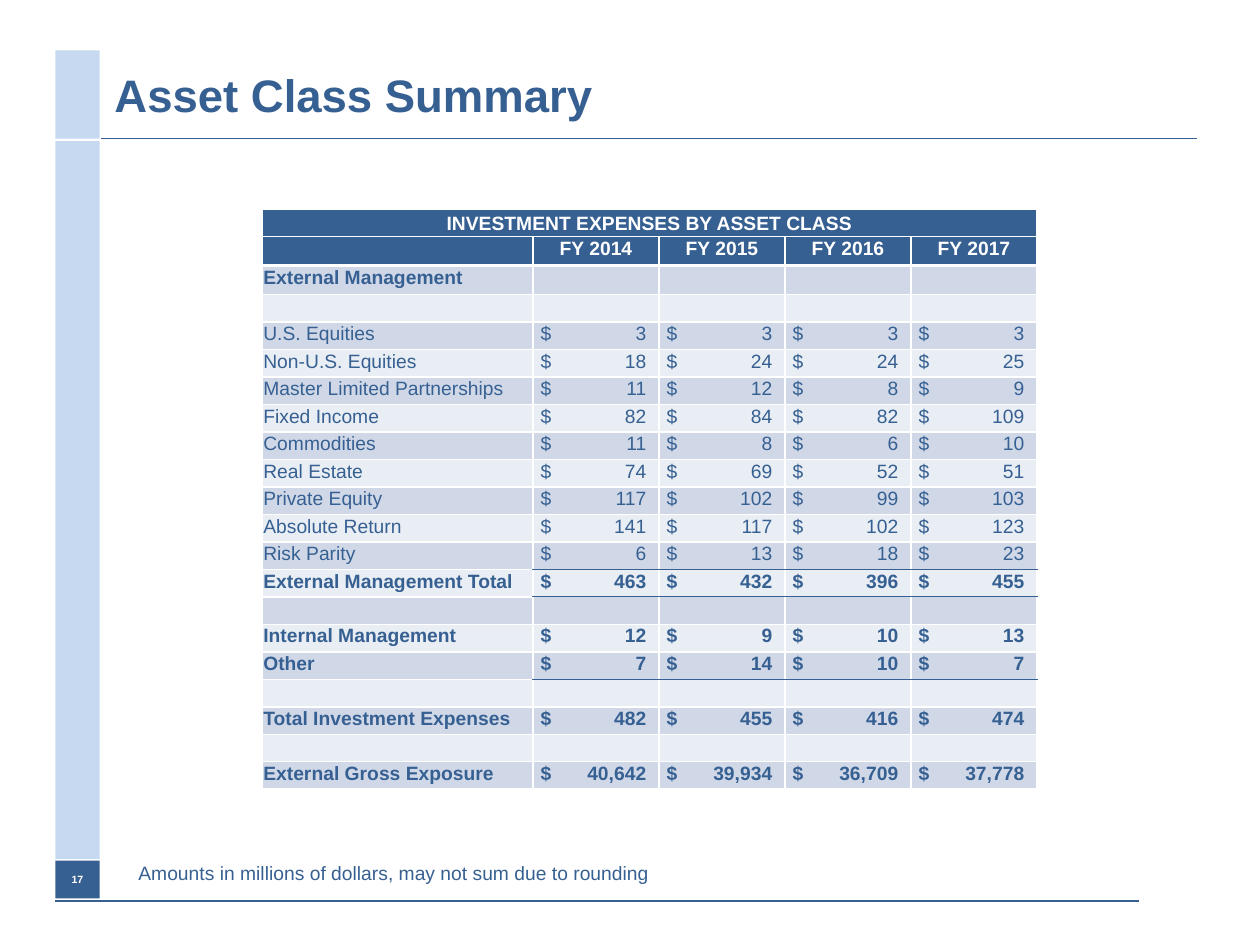
"""Build the Asset Class Summary slide with its investment expense table."""
from lxml.etree import SubElement
from pptx import Presentation
from pptx.dml.color import RGBColor
from pptx.enum.shapes import MSO_CONNECTOR, MSO_SHAPE
from pptx.enum.text import MSO_ANCHOR, PP_ALIGN
from pptx.oxml.ns import qn
from pptx.util import Inches, Pt

COLORS = {
    "blue": "376092", "ink": "366092", "pale": "C6D9F1",
    "band_dark": "D0D8E8", "band_light": "E9EDF4", "white": "FFFFFF",
}
HEADERS = ["", "FY 2014", "FY 2015", "FY 2016", "FY 2017"]
EXPENSES = [
    ("External Management", "", True),
    ("", "", False),
    ("U.S. Equities", "3 3 3 3", False),
    ("Non-U.S. Equities", "18 24 24 25", False),
    ("Master Limited Partnerships", "11 12 8 9", False),
    ("Fixed Income", "82 84 82 109", False),
    ("Commodities", "11 8 6 10", False),
    ("Real Estate", "74 69 52 51", False),
    ("Private Equity", "117 102 99 103", False),
    ("Absolute Return", "141 117 102 123", False),
    ("Risk Parity", "6 13 18 23", False),
    ("External Management Total", "463 432 396 455", True),
    ("", "", False),
    ("Internal Management", "12 9 10 13", True),
    ("Other", "7 14 10 7", True),
    ("", "", False),
    ("Total Investment Expenses", "482 455 416 474", True),
    ("", "", False),
    ("External Gross Exposure", "40,642 39,934 36,709 37,778", True),
]
RULED_ROWS = {"Risk Parity", "External Management Total", "Other"}


def write(tf, text, size, color, bold=False, align=PP_ALIGN.LEFT):
    p = tf.paragraphs[0]
    p.alignment = align
    r = p.add_run()
    r.text = text
    for name, value in {"name": "Arial", "size": Pt(size), "bold": bold}.items():
        setattr(r.font, name, value)
    r.font.color.rgb = RGBColor.from_string(COLORS[color])
    return p


def add_border(cell, side, color, width):
    ln = SubElement(cell._tc.get_or_add_tcPr(), qn(f"a:{side}"), w=str(Pt(width)))
    fill = SubElement(ln, qn("a:solidFill"))
    SubElement(fill, qn("a:srgbClr"), val=COLORS[color])


prs = Presentation()
prs.slide_width, prs.slide_height = Inches(10), Inches(7.5)
s = prs.slides.add_slide(prs.slide_layouts[6])

for x1, x2, y, width in [(0.44, 9.04, 7.15, 0.75), (0.8, 9.5, 1.1, 1)]:
    line = s.shapes.add_connector(
        MSO_CONNECTOR.STRAIGHT, Inches(x1), Inches(y), Inches(x2), Inches(y))
    line.line.color.rgb = RGBColor.from_string(COLORS["blue"])
    line.line.width = Pt(width)
    SubElement(line._element.spPr, qn("a:effectLst"))

for top, height, color, text in [
    (1.12, 5.7, "pale", ""), (0.4, 0.7, "pale", ""), (6.83, 0.3, "blue", "17"),
]:
    sp = s.shapes.add_shape(
        MSO_SHAPE.RECTANGLE, Inches(0.44), Inches(top), Inches(0.35), Inches(height))
    sp.shadow.inherit = False
    sp.fill.solid()
    sp.fill.fore_color.rgb = RGBColor.from_string(COLORS[color])
    sp.line.fill.background()
    if text:
        tf = sp.text_frame
        tf.margin_left = tf.margin_right = 0
        tf.vertical_anchor = MSO_ANCHOR.MIDDLE
        write(tf, text, 6, "white", True, PP_ALIGN.CENTER)

for left, top, width, height, text, size, bold in [
    (0.81, 0.4, 8.69, 0.7, "Asset Class Summary", 26, True),
    (1, 6.73, 5.67, 0.4,
     "Amounts in millions of dollars, may not sum due to rounding", 11, False),
]:
    tf = s.shapes.add_textbox(
        Inches(left), Inches(top), Inches(width), Inches(height)).text_frame
    tf.word_wrap = True
    tf.vertical_anchor = MSO_ANCHOR.MIDDLE
    write(tf, text, size, "blue", bold)

rows = [(["INVESTMENT EXPENSES BY ASSET CLASS"] + [""] * 4, True), (HEADERS, True)]
for label, amounts, bold in EXPENSES:
    rows.append(([label] + (amounts.split() or [""] * 4), bold))

table = s.shapes.add_table(
    len(rows), 5, Inches(2.08), Inches(1.66), Inches(6.15), Inches(4.61)).table
table.first_row = table.horz_banding = False
for i, column in enumerate(table.columns):
    column.width = Inches(1 if i else 2.15)
for i, row in enumerate(table.rows):
    row.height = Inches(0.23) if i in (1, 2) else Inches((4.61 - 2 * 0.23) / 19)
table.cell(0, 0).merge(table.cell(0, 4))

for i, (texts, bold) in enumerate(rows):
    heading = i < 2
    band = "blue" if heading else ("band_light" if i % 2 else "band_dark")
    for j, text in enumerate(texts):
        cell = table.cell(i, j)
        amount = bool(text) and j > 0 and not heading
        margins = {"left": 0.06 if amount else 0.01, "top": 0.01,
                   "right": 0.01, "bottom": 0}
        for side, value in margins.items():
            setattr(cell, f"margin_{side}", Inches(value))
        cell.vertical_anchor = MSO_ANCHOR.TOP if i else MSO_ANCHOR.MIDDLE
        p = cell.text_frame.paragraphs[0]
        if amount:
            tabs = SubElement(p._p.get_or_add_pPr(), qn("a:tabLst"))
            SubElement(tabs, qn("a:tab"), pos=str(Inches(0.84)), algn="r")
            text = f"$\t{text}"
        if text:
            write(cell.text_frame, text, 11, "white" if heading else "ink", bold,
                  PP_ALIGN.CENTER if heading else PP_ALIGN.LEFT)
        else:
            SubElement(p._p, qn("a:endParaRPr"), sz="1100")

        edges = {"lnL": ("white", 1), "lnR": ("white", 1)}
        for side, above in [("lnT", i - 1), ("lnB", i)]:
            edges[side] = ("white", 1.5 if above == 1 else 1)
            if j and above >= 0 and rows[above][0][0] in RULED_ROWS:
                edges[side] = ("ink", 0.5)
        for side, (color, width) in edges.items():
            add_border(cell, side, color, width)
        cell.fill.solid()
        cell.fill.fore_color.rgb = RGBColor.from_string(COLORS[band])

prs.save("out.pptx")
